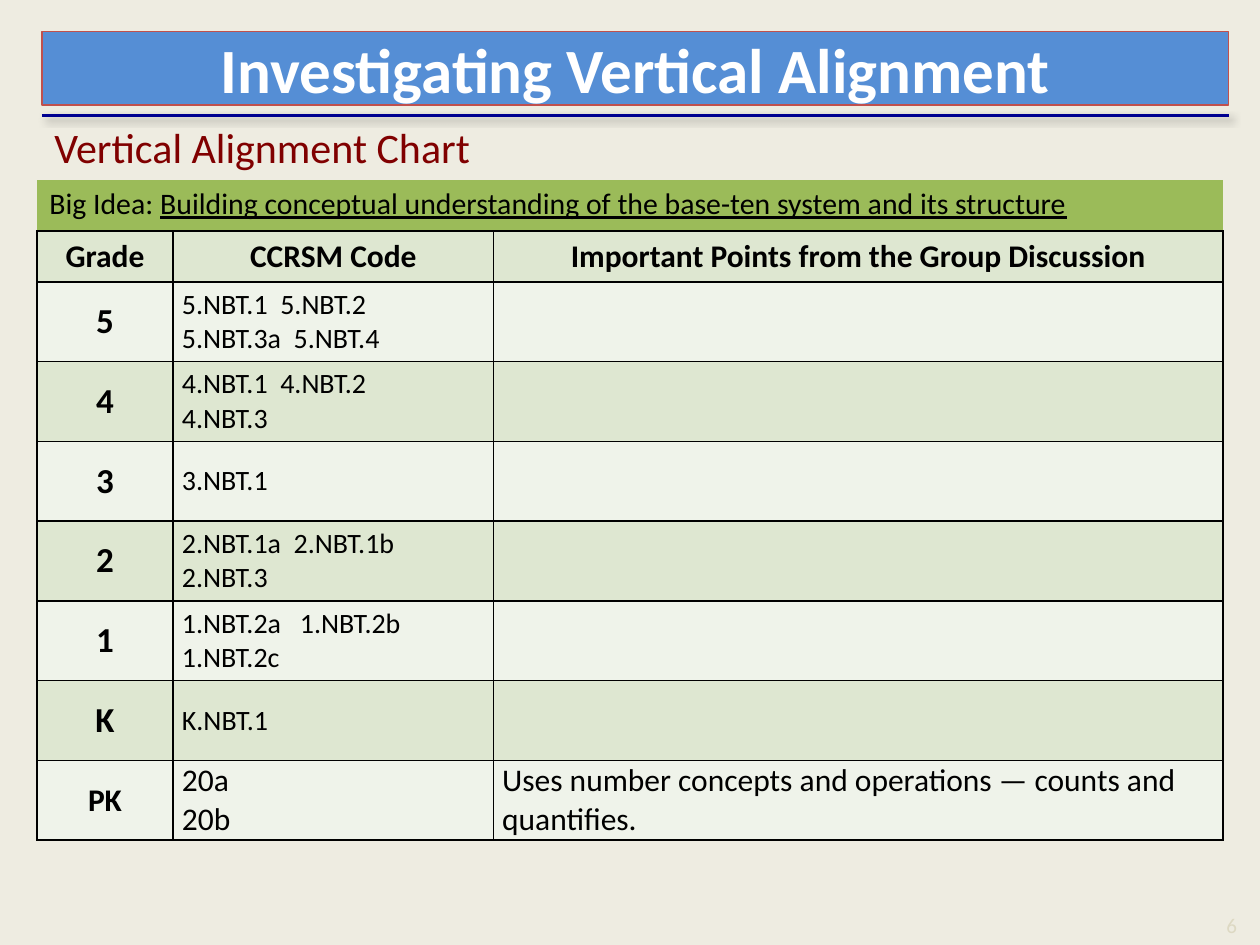
"""Build the vertical alignment chart slide."""
from dataclasses import dataclass

from lxml import etree
from pptx import Presentation
from pptx.dml.color import RGBColor
from pptx.enum.shapes import MSO_CONNECTOR
from pptx.enum.text import MSO_ANCHOR, MSO_AUTO_SIZE, PP_ALIGN
from pptx.oxml import parse_xml
from pptx.oxml.ns import nsdecls, qn
from pptx.util import Pt

STRAIGHT = MSO_CONNECTOR.STRAIGHT
MIDDLE, TOP = MSO_ANCHOR.MIDDLE, MSO_ANCHOR.TOP
LEFT, CENTER, RIGHT = PP_ALIGN.LEFT, PP_ALIGN.CENTER, PP_ALIGN.RIGHT
NO_FIT = MSO_AUTO_SIZE.NONE


@dataclass(frozen=True)
class Theme:
    font: str = "Calibri"
    background: str = "EEECE1"
    title_fill: str = "558ED5"
    title_line: str = "C0504D"
    rule: str = "000090"
    subtitle: str = "800000"
    idea: str = "9BBB59"
    bands: tuple = ("DEE7D1", "EFF3EA")
    ink: str = "000000"
    white: str = "FFFFFF"
    number: str = "DDD9C3"
    title_size: int = 36
    subtitle_size: int = 24
    grade_size: int = 20
    head_size: int = 18
    idea_size: int = 17
    code_size: int = 16
    number_size: int = 12


class Deck:
    def __init__(self, theme):
        self.theme = theme
        self.prs = Presentation()
        self.prs.slide_width, self.prs.slide_height = Pt(720), Pt(540)
        self.slide = self.prs.slides.add_slide(self.prs.slide_layouts[5])
        fill = self.slide.background.fill
        fill.solid()
        fill.fore_color.rgb = RGBColor.from_string(theme.background)

    def format(self, tf, size, color, bold=False, align=LEFT):
        for p in tf.paragraphs:
            p.alignment = align
            for r in p.runs:
                r.font.name = self.theme.font
                r.font.size = Pt(size)
                r.font.bold = bold
                r.font.color.rgb = RGBColor.from_string(color)

    def title(self, text, x, y, w, h):
        t = self.theme
        sp = self.slide.shapes.title
        sp.left, sp.top, sp.width, sp.height = Pt(x), Pt(y), Pt(w), Pt(h)
        sp.fill.solid()
        sp.fill.fore_color.rgb = RGBColor.from_string(t.title_fill)
        sp.line.color.rgb = RGBColor.from_string(t.title_line)
        sp.line.width = Pt(0.75)
        tf = sp.text_frame
        tf.text = text
        tf.auto_size = NO_FIT
        tf.vertical_anchor = MIDDLE
        self.format(tf, t.title_size, t.white, True, CENTER)

    def rule(self, x, y, w):
        line = self.slide.shapes.add_connector(STRAIGHT, Pt(x), Pt(y), Pt(x + w), Pt(y))
        line.line.color.rgb = RGBColor.from_string(self.theme.rule)
        line.line.width = Pt(1.75)
        sp_pr = line._element.spPr
        effects = etree.SubElement(sp_pr, qn("a:effectLst"))
        shadow = etree.SubElement(effects, qn("a:outerShdw"), blurRad=str(Pt(4)),
                                  dist=str(Pt(3)), dir="2700000", rotWithShape="0")
        color = etree.SubElement(shadow, qn("a:srgbClr"), val=self.theme.ink)
        etree.SubElement(color, qn("a:alpha"), val="43000")

    def text(self, text, x, y, w, h, size, color, align=LEFT, space=0):
        tf = self.slide.shapes.add_textbox(Pt(x), Pt(y), Pt(w), Pt(h)).text_frame
        tf.word_wrap = True
        tf.text = text
        tf.paragraphs[0].space_before = Pt(space)
        self.format(tf, size, color, align=align)

    def table(self, x, y, widths, heights):
        sp = self.slide.shapes.add_table(len(heights), len(widths), Pt(x), Pt(y),
                                         Pt(sum(widths)), Pt(sum(heights)))
        table = sp.table
        table.first_row = table.horz_banding = False
        for column, width in zip(table.columns, widths):
            column.width = Pt(width)
        for row, height in zip(table.rows, heights):
            row.height = Pt(height)
        return table

    def cell(self, cell, text, fill, size, bold=False, align=LEFT, tight=True, sides="LRTB"):
        cell.text = text
        cell.vertical_anchor = MIDDLE if tight else TOP
        if tight:
            cell.margin_left = cell.margin_right = Pt(5)
            cell.margin_top = cell.margin_bottom = 0
        self.format(cell.text_frame, size, self.theme.ink, bold, align)
        tc_pr = cell._tc.get_or_add_tcPr()
        solid = f'<a:solidFill><a:srgbClr val="{self.theme.ink}"/></a:solidFill>'
        for side in "LRTB":
            paint = solid if side in sides else "<a:noFill/>"
            tc_pr.append(parse_xml(
                f'<a:ln{side} {nsdecls("a")} w="{Pt(1)}">{paint}</a:ln{side}>'))
        cell.fill.solid()
        cell.fill.fore_color.rgb = RGBColor.from_string(fill)


HEADERS = ("Grade", "CCRSM Code", "Important Points from the Group Discussion")
GRADES = (
    ("5", "5.NBT.1  5.NBT.2\n5.NBT.3a  5.NBT.4", ""),
    ("4", "4.NBT.1  4.NBT.2\n4.NBT.3", ""),
    ("3", "3.NBT.1", ""),
    ("2", "2.NBT.1a  2.NBT.1b\n2.NBT.3", ""),
    ("1", "1.NBT.2a   1.NBT.2b\n1.NBT.2c", ""),
    ("K", "K.NBT.1", ""),
    ("PK", "20a\n20b", "Uses number concepts and operations — counts and quantifies."),
)


def main():
    t = Theme()
    deck = Deck(t)
    deck.title("Investigating Vertical Alignment", 24, 18, 678, 42)
    deck.rule(24, 66, 678)
    deck.text("Vertical Alignment Chart", 24, 66, 678, 42, t.subtitle_size, t.subtitle, space=1)
    deck.text("6", 642, 518, 72, 22, t.number_size, t.number, RIGHT)

    table = deck.table(21, 103, (78, 183, 417), [29, 29] + [45.6] * len(GRADES))
    table.cell(0, 0).merge(table.cell(0, 2))
    for col, header in enumerate(HEADERS):
        deck.cell(table.cell(0, col), "", t.idea, t.idea_size, tight=False, sides="B")
        deck.cell(table.cell(1, col), header, t.bands[0], t.head_size, True, CENTER, False)
    idea = table.cell(0, 0).text_frame
    p = idea.paragraphs[0]
    p.add_run().text = "Big Idea: "
    r = p.add_run()
    r.text = "Building conceptual understanding of the base-ten system and its structure"
    r.font.underline = True
    deck.format(idea, t.idea_size, t.ink)

    for row, (grade, codes, points) in enumerate(GRADES, 2):
        fill = t.bands[(row + 1) % 2]
        last = grade == "PK"
        deck.cell(table.cell(row, 0), grade, fill, t.head_size if last else t.grade_size, True, CENTER)
        deck.cell(table.cell(row, 1), codes, fill, t.head_size if last else t.code_size)
        deck.cell(table.cell(row, 2), points, fill, t.head_size)
    deck.prs.save("out.pptx")


if __name__ == "__main__":
    main()
